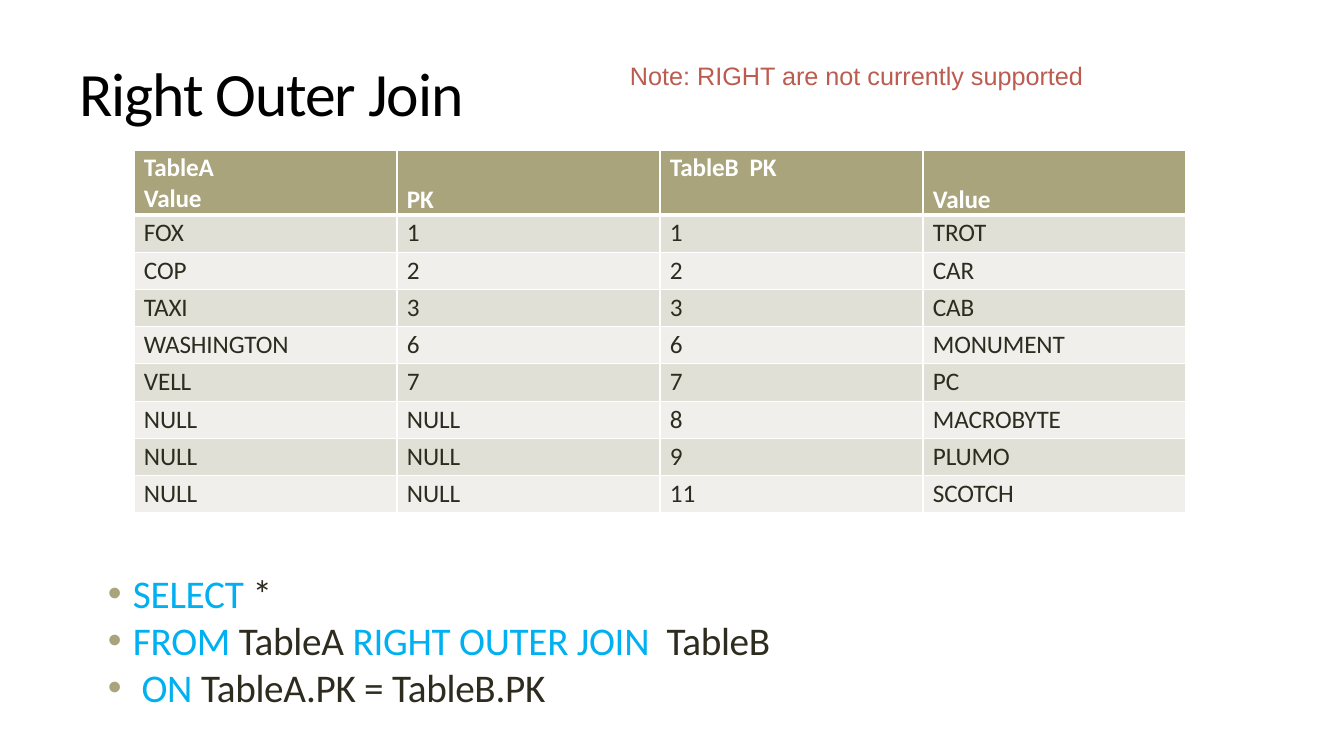
from lxml import etree
from pptx import Presentation
from pptx.dml.color import RGBColor
from pptx.enum.text import MSO_ANCHOR, MSO_AUTO_SIZE, PP_ALIGN
from pptx.oxml.ns import qn
from pptx.util import Emu, Pt

TOP, MIDDLE, BOTTOM = MSO_ANCHOR.TOP, MSO_ANCHOR.MIDDLE, MSO_ANCHOR.BOTTOM
LEFT = PP_ALIGN.LEFT
NO_FIT = MSO_AUTO_SIZE.NONE

BLACK = RGBColor(0x00, 0x00, 0x00)
WHITE = RGBColor(0xFF, 0xFF, 0xFF)
INK = RGBColor(0x2E, 0x2B, 0x1F)
KEYWORD = RGBColor(0x00, 0xB0, 0xF0)
OLIVE = RGBColor(0xA9, 0xA4, 0x7B)
BAND_DARK = RGBColor(0xE1, 0xE0, 0xD6)
BAND_LIGHT = RGBColor(0xF0, 0xEF, 0xEB)
NOTE_RED = RGBColor(0xBC, 0x5B, 0x4F)

HEADER = ["TableA\vValue", "PK", "TableB  PK", "Value"]
ROWS = [
    ["FOX", "1", "1", "TROT"],
    ["COP", "2", "2", "CAR"],
    ["TAXI", "3", "3", "CAB"],
    ["WASHINGTON", "6", "6", "MONUMENT"],
    ["VELL", "7", "7", "PC"],
    ["NULL", "NULL", "8", "MACROBYTE"],
    ["NULL", "NULL", "9", "PLUMO"],
    ["NULL", "NULL", "11", "SCOTCH"],
]
QUERY = [
    [("SELECT ", KEYWORD), ("*", INK)],
    [("FROM ", KEYWORD), ("TableA ", INK),
     ("RIGHT OUTER JOIN  ", KEYWORD), ("TableB", INK)],
    [(" ON ", KEYWORD), ("TableA.PK = TableB.PK", INK)],
]


def px(n):
    return Emu(round(n * 914400 / 100.8))


def add_color(parent, color):
    etree.SubElement(parent, qn("a:srgbClr")).set("val", str(color))


class Deck:
    font = "Calibri"

    def __init__(self, width, height):
        self.prs = Presentation()
        self.prs.slide_width, self.prs.slide_height = px(width), px(height)
        self.slide = self.prs.slides.add_slide(self.prs.slide_layouts[1])

    def format(self, p, size, color, bold=False, font=None, spacing=0):
        """Style every run of a paragraph; spacing is in hundredths of a point."""
        p.alignment = LEFT
        p.space_before = Pt(0)
        for r in p.runs:
            r.font.size, r.font.bold = Pt(size), bold
            r.font.name = font or self.font
            r.font.color.rgb = color
            r.font._element.set("spc", str(spacing))

    def place(self, sp, box, anchor, inset):
        """Set the position and text frame; inset is left/right, top/bottom."""
        sp.left, sp.top, sp.width, sp.height = map(px, box)
        tf = sp.text_frame
        tf.word_wrap, tf.auto_size = True, NO_FIT
        tf.vertical_anchor = anchor
        tf.margin_left = tf.margin_right = px(inset[0])
        tf.margin_top = tf.margin_bottom = px(inset[1])
        return tf

    def title(self, text, box):
        tf = self.place(self.slide.shapes.title, box, MIDDLE, (0, 0))
        tf.text = text
        self.format(tf.paragraphs[0], 44, BLACK, spacing=-80)

    def bullets(self, lines, box):
        tf = self.place(self.slide.placeholders[1], box, TOP, (0, 1))
        for i, line in enumerate(lines):
            p = tf.add_paragraph() if i else tf.paragraphs[0]
            for text, _ in line:
                p.add_run().text = text
            self.format(p, 28, INK, spacing=-20)
            for r, (_, color) in zip(p.runs, line):
                r.font.color.rgb = color
            pPr = p._p.get_or_add_pPr()
            pPr.set("marL", str(px(26)))
            pPr.set("indent", str(px(-25)))
            add_color(etree.SubElement(pPr, qn("a:buClr")), OLIVE)
            etree.SubElement(pPr, qn("a:buFont")).set("typeface", "Arial")
            etree.SubElement(pPr, qn("a:buChar")).set("char", "•")

    def note(self, text, box):
        sp = self.slide.shapes.add_textbox(*map(px, box))
        tf = self.place(sp, box, TOP, (10, 5))
        tf.text = text
        self.format(tf.paragraphs[0], 18, NOTE_RED, font="Arial")

    def borders(self, cell, **widths):
        """Draw white cell borders, 1 pt unless a side (L, R, T, B) is given."""
        tcPr = cell._tc.get_or_add_tcPr()
        for side in "LRTB":
            ln = etree.SubElement(tcPr, qn(f"a:ln{side}"))
            ln.set("w", str(Pt(widths.get(side, 1))))
            add_color(etree.SubElement(ln, qn("a:solidFill")), WHITE)

    def cell(self, cell, text, fill, color, bold=False, anchor=TOP, **widths):
        self.borders(cell, **widths)
        cell.fill.solid()
        cell.fill.fore_color.rgb = fill
        cell.margin_left, cell.margin_right = px(10), 0
        cell.margin_top, cell.margin_bottom = px(3), 0
        cell.vertical_anchor = anchor
        cell.text = text
        self.format(cell.text_frame.paragraphs[0], 18, color, bold, spacing=-10)

    def table(self, header, rows, box, header_height):
        table = self.slide.shapes.add_table(
            len(rows) + 1, len(header), *map(px, box)).table
        for col in table.columns:
            col.width = px(box[2] / len(header))
        for row in table.rows:
            row.height = px((box[3] - header_height) / len(rows))
        table.rows[0].height = px(header_height)
        for c, text in enumerate(header):
            self.cell(table.cell(0, c), text, OLIVE, WHITE, bold=True,
                      anchor=BOTTOM if c % 2 else TOP, B=3)
        for i, row in enumerate(rows):
            fill = BAND_LIGHT if i % 2 else BAND_DARK
            for c, text in enumerate(row):
                self.cell(table.cell(i + 1, c), text, fill, INK,
                          T=1 if i else 3)


def main():
    deck = Deck(1344, 756)
    deck.title("Right Outer Join", (79, 53, 562, 77))
    deck.bullets(QUERY, (107, 568, 958, 145))
    deck.table(HEADER, ROWS, (134, 150, 1052, 363), 65)
    deck.note("Note: RIGHT are not currently supported", (620, 55, 672, 40))
    deck.prs.save("out.pptx")


if __name__ == "__main__":
    main()
